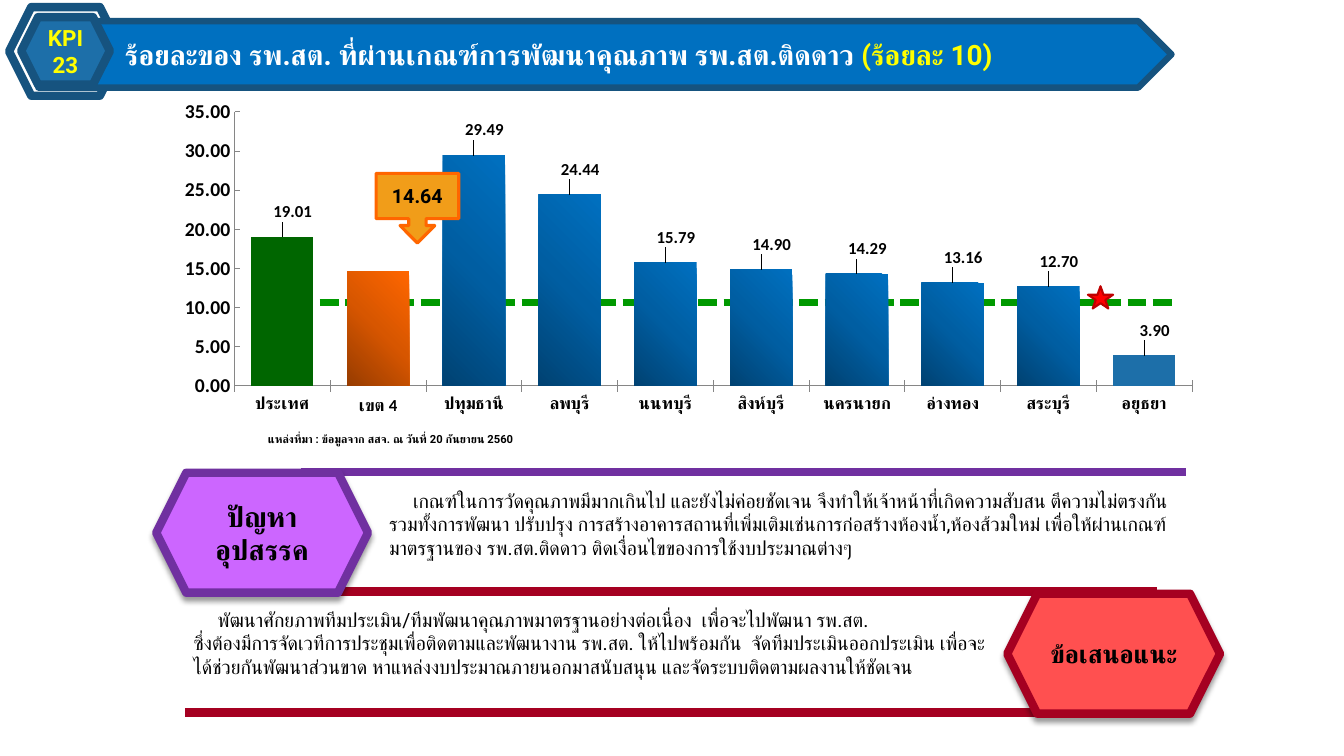
from copy import deepcopy
from typing import NamedTuple

from lxml import etree
from pptx import Presentation
from pptx.chart.data import CategoryChartData
from pptx.dml.color import RGBColor
from pptx.enum.chart import XL_CHART_TYPE, XL_LABEL_POSITION, XL_TICK_MARK
from pptx.enum.dml import MSO_LINE
from pptx.enum.shapes import MSO_CONNECTOR, MSO_SHAPE
from pptx.enum.text import MSO_ANCHOR, PP_ALIGN
from pptx.oxml import parse_xml
from pptx.oxml.ns import nsdecls, qn
from pptx.util import Pt

PX = 9144  # 100 px to the inch
TEXT_FONT, CHART_FONT = "Roboto", "Calibri"
BLACK, WHITE, YELLOW = "000000", "FFFFFF", "FFFF00"
BLUE, MID_BLUE, DARK_BLUE = "0070C0", "1D6FA9", "16537F"
PURPLE, CRIMSON, ORANGE, GREEN = "7030A0", "A50021", "FF6600", "006600"
AXIS_GREY = "868686"
HEXAGON, PENTAGON = MSO_SHAPE.HEXAGON, MSO_SHAPE.PENTAGON
CALLOUT, STAR = MSO_SHAPE.DOWN_ARROW_CALLOUT, MSO_SHAPE.STAR_5_POINT
LEFT, CENTER = PP_ALIGN.LEFT, PP_ALIGN.CENTER

BLUE_STOPS = ("004272", "005EA2", BLUE)
ORANGE_STOPS = ("973C00", "D75600", ORANGE)
REGION = 1  # its value stands in the callout
RATES = {
    "ประเทศ": 19.01, "เขต 4": 14.64, "ปทุมธานี": 29.49, "ลพบุรี": 24.44, "นนทบุรี": 15.79,
    "สิงห์บุรี": 14.9, "นครนายก": 14.29, "อ่างทอง": 13.16, "สระบุรี": 12.7, "อยุธยา": 3.9,
}


class Box(NamedTuple):
    left: int
    top: int
    width: int
    height: int


class Run(NamedTuple):
    text: str
    size: int
    color: str = BLACK
    bold: bool = True


class Panel(NamedTuple):
    kind: int
    box: Box
    fill: str | None
    line: str
    weight: float
    paragraphs: tuple[tuple[Run, ...], ...] = ()
    align: int = CENTER
    margin_left: int = 10
    shadow: bool = False


class Rule(NamedTuple):
    x1: int
    x2: int
    y: int
    color: str
    weight: float
    dash: int | None = None


class Note(NamedTuple):
    box: Box
    paragraphs: tuple[tuple[Run, ...], ...]
    wrap: bool = True
    indent: int = 0


TARGET = Rule(267, 1167, 300, "009900", 4.5, MSO_LINE.SQUARE_DOT)
PROBLEM_RULE = Rule(299, 1176, 468, PURPLE, 6)
PROPOSAL_RULES = (Rule(322, 1148, 587, CRIMSON, 6), Rule(184, 1047, 707, CRIMSON, 6))

HEADER_AND_CALLOUT = (
    Panel(HEXAGON, Box(9, 7, 112, 88), None, DARK_BLUE, 6),
    Panel(PENTAGON, Box(38, 21, 1124, 66), BLUE, DARK_BLUE, 4.5, ((
        Run("ร้อยละของ รพ.สต. ที่ผ่านเกณฑ์การพัฒนาคุณภาพ รพ.สต.ติดดาว ", 20, WHITE),
        Run("(ร้อยละ 10)", 20, YELLOW)),), LEFT, 86),
    Panel(HEXAGON, Box(21, 17, 88, 67), MID_BLUE, DARK_BLUE, 6,
          ((Run("KPI", 16, YELLOW),), (Run("23", 16, YELLOW),))),
    Panel(CALLOUT, Box(373, 172, 82, 69), "F19D19", ORANGE, 2.25, ((Run("14.64", 14),),)),
)
SECTION_TITLES = (
    Panel(HEXAGON, Box(155, 469, 210, 119), "CC66FF", PURPLE, 6,
          ((Run("ปัญหาอุปสรรค", 20),),), shadow=True),
    Panel(HEXAGON, Box(999, 589, 211, 119), "FF5050", CRIMSON, 6,
          ((Run("ข้อเสนอแนะ", 18),),), shadow=True),
)
STAR_MARK = Panel(STAR, Box(1079, 284, 25, 22), "FF0000", "C00000", 1.5)

NOTES = (
    Note(Box(256, 424, 296, 24),
         ((Run("แหล่งที่มา : ข้อมูลจาก สสจ. ณ วันที่ 20 กันยายน 2560", 8),),), wrap=False),
    Note(Box(376, 480, 815, 81), ((Run(
        "เกณฑ์ในการวัดคุณภาพมีมากเกินไป และยังไม่ค่อยชัดเจน จึงทำให้เจ้าหน้าที่เกิดความสับสน "
        "ตีความไม่ตรงกัน รวมทั้งการพัฒนา ปรับปรุง การสร้างอาคารสถานที่เพิ่มเติมเช่นการก่อสร้างห้องน้ำ,"
        "ห้องส้วมใหม่ เพื่อให้ผ่านเกณฑ์มาตรฐานของ รพ.สต.ติดดาว ติดเงื่อนไขของการใช้งบประมาณต่างๆ",
        14, bold=False),),), indent=24),
    Note(Box(182, 598, 822, 104), (
        (Run("พัฒนาศักยภาพทีมประเมิน/ทีมพัฒนาคุณภาพมาตรฐานอย่างต่อเนื่อง  เพื่อจะไปพัฒนา รพ.สต.",
             14, bold=False),),
        (Run("ซึ่งต้องมีการจัดเวทีการประชุมเพื่อติดตามและพัฒนางาน รพ.สต. ให้ไปพร้อมกัน  "
             "จัดทีมประเมินออกประเมิน เพื่อจะได้ช่วยกันพัฒนาส่วนขาด "
             "หาแหล่งงบประมาณภายนอกมาสนับสนุน และจัดระบบติดตามผลงานให้ชัดเจน",
             14, bold=False),)), indent=24),
)


def rgb(color: str) -> RGBColor:
    return RGBColor.from_string(color)


def emu(box: Box) -> list[int]:
    return [length * PX for length in box]


def write(frame, paragraphs, align: int = LEFT) -> None:
    for number, runs in enumerate(paragraphs):
        paragraph = frame.add_paragraph() if number else frame.paragraphs[0]
        paragraph.alignment = align
        for spec_run in runs:
            run = paragraph.add_run()
            run.text = spec_run.text
            run.font.size, run.font.bold = Pt(spec_run.size), spec_run.bold
            run.font.color.rgb = rgb(spec_run.color)
            run.font.name = TEXT_FONT
            etree.SubElement(run.font._element, qn("a:cs"), typeface=TEXT_FONT)


def draw_panel(slide, panel: Panel) -> None:
    shape = slide.shapes.add_shape(panel.kind, *emu(panel.box))
    shape.shadow.inherit = False
    if panel.fill:
        shape.fill.solid()
        shape.fill.fore_color.rgb = rgb(panel.fill)
    else:
        shape.fill.background()
    shape.line.color.rgb, shape.line.width = rgb(panel.line), Pt(panel.weight)
    if panel.shadow:
        shape.element.spPr.find(qn("a:effectLst")).append(parse_xml(
            f'<a:outerShdw {nsdecls("a")} blurRad="50800" dist="38100" dir="5400000">'
            f'<a:srgbClr val="{BLACK}"><a:alpha val="40000"/></a:srgbClr></a:outerShdw>'))
    frame = shape.text_frame
    frame.vertical_anchor = MSO_ANCHOR.MIDDLE
    frame.margin_left = panel.margin_left * PX
    write(frame, panel.paragraphs, panel.align)


def draw_rule(slide, rule: Rule) -> None:
    line = slide.shapes.add_connector(
        MSO_CONNECTOR.STRAIGHT, rule.x1 * PX, rule.y * PX, rule.x2 * PX, rule.y * PX)
    line.line.color.rgb, line.line.width = rgb(rule.color), Pt(rule.weight)
    if rule.dash:
        line.line.dash_style = rule.dash
    etree.SubElement(line.element.spPr, qn("a:effectLst"))


def draw_note(slide, note: Note) -> None:
    frame = slide.shapes.add_textbox(*emu(note.box)).text_frame
    frame.word_wrap = note.wrap
    write(frame, note.paragraphs)
    if note.indent:
        frame.paragraphs[0]._p.get_or_add_pPr().set("indent", str(note.indent * PX))


def manual_layout(inner: str, x: float, y: float, size: str = ""):
    return parse_xml(f'<c:layout {nsdecls("c")}><c:manualLayout>{inner}'
                     f'<c:x val="{x}"/><c:y val="{y}"/>{size}</c:manualLayout></c:layout>')


def fill_bar(chart, index: int, stops: tuple[str, ...]) -> None:
    fill = chart.plots[0].series[0].points[index].format.fill
    if len(stops) == 1:
        fill.solid()
        fill.fore_color.rgb = rgb(stops[0])
        return
    fill.gradient()
    gradient = chart.element.xpath(f".//c:dPt[c:idx/@val='{index}']//a:gradFill")[0]
    gradient.clear()
    colors = "".join(f'<a:gs pos="{n * 50000}"><a:srgbClr val="{color}"/></a:gs>'
                     for n, color in enumerate(stops))
    gradient.append(parse_xml(f'<a:gsLst {nsdecls("a")}>{colors}</a:gsLst>'))
    gradient.append(parse_xml(f'<a:path {nsdecls("a")} path="circle">'
                              '<a:fillToRect t="100000" r="100000"/></a:path>'))


def label_bars(chart) -> None:
    labels = chart.plots[0].series[0].data_labels
    labels.show_value = True
    labels.number_format, labels.number_format_is_linked = "0.00", False
    labels.position = XL_LABEL_POSITION.OUTSIDE_END
    labels.font.size, labels.font.bold, labels.font.name = Pt(12), True, CHART_FONT
    group = chart.element.xpath(".//c:ser/c:dLbls")[0]
    shared = [part for part in group if part.tag != qn("c:showLeaderLines")]
    for index in range(len(RATES)):
        label = parse_xml(f'<c:dLbl {nsdecls("c")}><c:idx val="{index}"/></c:dLbl>')
        if index == REGION:
            etree.SubElement(label, qn("c:delete"), val="1")
        else:
            label.append(manual_layout("", 0.01, -0.03))
            label.extend(deepcopy(shared))
        group.insert(index, label)


def draw_chart(slide) -> None:
    data = CategoryChartData(number_format="0.00")
    data.categories = list(RATES)
    data.add_series("Series 1", list(RATES.values()))
    chart = slide.shapes.add_chart(
        XL_CHART_TYPE.COLUMN_CLUSTERED, *emu(Box(150, 93, 1033, 362)), data).chart
    chart.has_legend = chart.has_title = False
    chart.font.size, chart.font.name = Pt(18), CHART_FONT
    chart.font.color.rgb = rgb(BLACK)
    # Transparent background and plot area
    chart.element.xpath("c:chart")[0].addnext(parse_xml(
        f'<c:spPr {nsdecls("c", "a")}><a:noFill/><a:ln><a:noFill/></a:ln></c:spPr>'))
    plot_area = chart.element.xpath("c:chart/c:plotArea")[0]
    for layout in plot_area.xpath("c:layout"):
        plot_area.remove(layout)
    plot_area.insert(0, manual_layout(
        '<c:layoutTarget val="inner"/><c:xMode val="edge"/><c:yMode val="edge"/>',
        0.08, 0.05, '<c:w val="0.92"/><c:h val="0.75"/>'))
    # Axes
    for axis, size, tick in ((chart.category_axis, 12, XL_TICK_MARK.CROSS),
                             (chart.value_axis, 14, XL_TICK_MARK.INSIDE)):
        axis.has_major_gridlines = False
        axis.major_tick_mark, axis.minor_tick_mark = tick, XL_TICK_MARK.NONE
        axis.format.line.color.rgb = rgb(AXIS_GREY)
        font = axis.tick_labels.font
        font.size, font.bold, font.name = Pt(size), True, CHART_FONT
    scale = chart.value_axis
    scale.minimum_scale, scale.maximum_scale, scale.major_unit = 0, 35, 5
    scale.tick_labels.number_format = "0.00"
    scale.tick_labels.number_format_is_linked = False
    # Bars: country, region, provinces
    plot = chart.plots[0]
    plot.gap_width, plot.vary_by_categories = 54, False
    provinces = len(RATES) - 3
    for index, stops in enumerate([(GREEN,), ORANGE_STOPS] + [BLUE_STOPS] * provinces + [(MID_BLUE,)]):
        fill_bar(chart, index, stops)
    label_bars(chart)


def main() -> None:
    deck = Presentation()
    deck.slide_width, deck.slide_height = 1333 * PX, 750 * PX
    slide = deck.slides.add_slide(deck.slide_layouts[6])
    # Indicator chart with its target line
    draw_rule(slide, PROBLEM_RULE)
    draw_rule(slide, TARGET)
    draw_chart(slide)
    for panel in HEADER_AND_CALLOUT:
        draw_panel(slide, panel)
    # Problems and proposals
    for rule, panel in zip(PROPOSAL_RULES, SECTION_TITLES):
        draw_rule(slide, rule)
        draw_panel(slide, panel)
    for note in NOTES:
        draw_note(slide, note)
    draw_panel(slide, STAR_MARK)
    deck.save("out.pptx")


if __name__ == "__main__":
    main()
